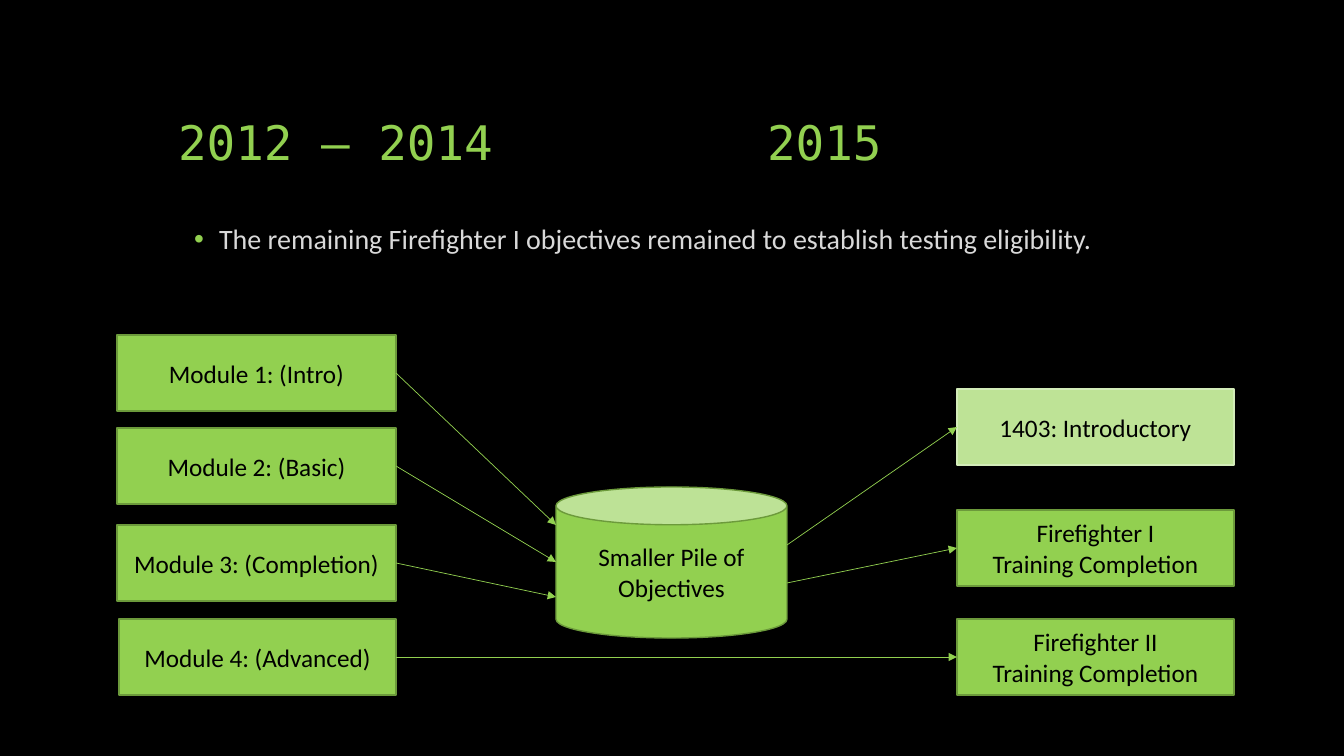
from dataclasses import dataclass

from lxml.etree import SubElement
from pptx import Presentation
from pptx.dml.color import RGBColor
from pptx.enum.shapes import MSO_CONNECTOR, MSO_SHAPE
from pptx.enum.text import MSO_ANCHOR, MSO_AUTO_SIZE, PP_ALIGN
from pptx.oxml.ns import qn
from pptx.util import Emu, Pt

GREEN, EDGE = "92D050", "6C9A3B"
PALE, PALE_EDGE = "BEE396", "D3ECB9"
BLACK, GREY = "000000", "D9D9D9"
BOX_H = 76


def px(n: int) -> Emu:
    return Emu(round(n * 914400 / 100.8))


def rgb(color: str) -> RGBColor:
    return RGBColor.from_string(color)


@dataclass
class Node:
    lines: list[str]
    x: int
    y: int
    w: int
    h: int = BOX_H
    fill: str = GREEN
    edge: str = EDGE
    kind: MSO_SHAPE = MSO_SHAPE.RECTANGLE

    @property
    def right(self) -> int:
        return self.x + self.w

    @property
    def mid(self) -> int:
        return self.y + self.h // 2


def add_run(p, text: str, size: int, color: str, font: str = "Calibri") -> None:
    r = p.add_run()
    r.text = text
    r.font.size = Pt(size)
    r.font.name = font
    r.font.color.rgb = rgb(color)


def place(sp, x: int, y: int, w: int, h: int) -> None:
    sp.left, sp.top, sp.width, sp.height = px(x), px(y), px(w), px(h)


def add_node(s, node: Node) -> None:
    sp = s.shapes.add_shape(node.kind, px(node.x), px(node.y), px(node.w), px(node.h))
    sp.shadow.inherit = False
    sp.fill.solid()
    sp.fill.fore_color.rgb = rgb(node.fill)
    sp.line.color.rgb = rgb(node.edge)
    sp.line.width = Pt(1)
    tf = sp.text_frame
    tf.word_wrap = True
    tf.vertical_anchor = MSO_ANCHOR.MIDDLE
    for i, line in enumerate(node.lines):
        p = tf.add_paragraph() if i else tf.paragraphs[0]
        p.alignment = PP_ALIGN.CENTER
        add_run(p, line, 18, BLACK)


def add_arrow(s, x1: int, y1: int, x2: int, y2: int) -> None:
    c = s.shapes.add_connector(MSO_CONNECTOR.STRAIGHT, px(x1), px(y1), px(x2), px(y2))
    c.line.color.rgb = rgb(GREEN)
    c.line.width = Pt(0.5)
    SubElement(c.line._get_or_add_ln(), qn("a:tailEnd"), type="triangle")
    SubElement(c._element.spPr, qn("a:effectLst"))


def add_title(s) -> None:
    sp = s.shapes.title
    place(sp, 168, 50, 1008, 126)
    tf = sp.text_frame
    tf.auto_size = MSO_AUTO_SIZE.NONE
    tf.vertical_anchor = MSO_ANCHOR.BOTTOM
    p = tf.paragraphs[0]
    p.alignment = PP_ALIGN.LEFT
    p.line_spacing = 0.9
    add_run(p, "2012 – 2014\t2015", 34, GREEN, "DejaVu Sans Mono")
    # Tab stop that sets the second year apart
    tabs = SubElement(p._p.get_or_add_pPr(), qn("a:tabLst"))
    SubElement(tabs, qn("a:tab"), pos=str(px(589)), algn="l")


def add_body(s) -> None:
    sp = s.placeholders[1]
    place(sp, 184, 220, 1008, 133)
    tf = sp.text_frame
    tf.auto_size = MSO_AUTO_SIZE.NONE
    p = tf.paragraphs[0]
    p.line_spacing = 0.9
    p.space_before = Pt(18)
    add_run(p, "The remaining Firefighter I objectives remained to establish "
               "testing eligibility.", 20, GREY)
    pPr = p._p.get_or_add_pPr()
    pPr.set("marL", str(px(25)))
    pPr.set("indent", str(-px(25)))
    SubElement(SubElement(pPr, qn("a:buClr")), qn("a:srgbClr"), val=GREEN)
    SubElement(pPr, qn("a:buFont"), typeface="Arial")
    SubElement(pPr, qn("a:buChar"), char="•")


def main() -> None:
    prs = Presentation()
    prs.slide_width, prs.slide_height = px(1344), px(756)
    s = prs.slides.add_slide(prs.slide_layouts[1])
    s.background.fill.solid()
    s.background.fill.fore_color.rgb = rgb(BLACK)
    add_title(s)
    add_body(s)

    # Modules, objectives and outcomes
    modules = [
        Node(["Module 1: (Intro)"], 117, 335, 279),
        Node(["Module 2: (Basic)"], 117, 428, 279),
        Node(["Module 3: (Completion)"], 117, 525, 279),
        Node(["Module 4: (Advanced)"], 119, 619, 277),
    ]
    pile = Node(["Smaller Pile of Objectives"], 556, 487, 231, 151, kind=MSO_SHAPE.CAN)
    outcomes = [
        Node(["1403: Introductory"], 957, 389, 277, fill=PALE, edge=PALE_EDGE),
        Node(["Firefighter I", "Training Completion"], 957, 510, 277),
        Node(["Firefighter II", "Training Completion"], 957, 619, 277),
    ]
    for node in [*modules, pile, *outcomes]:
        add_node(s, node)

    # Arrows into the pile, out of it, and past it
    for module, y in zip(modules, (525, 562, 597)):
        add_arrow(s, module.right, module.mid, pile.x, y)
    for outcome, y in zip(outcomes, (545, 583)):
        add_arrow(s, pile.right, y, outcome.x, outcome.mid)
    add_arrow(s, modules[-1].right, modules[-1].mid, outcomes[-1].x, outcomes[-1].mid)

    prs.save("out.pptx")


if __name__ == "__main__":
    main()
